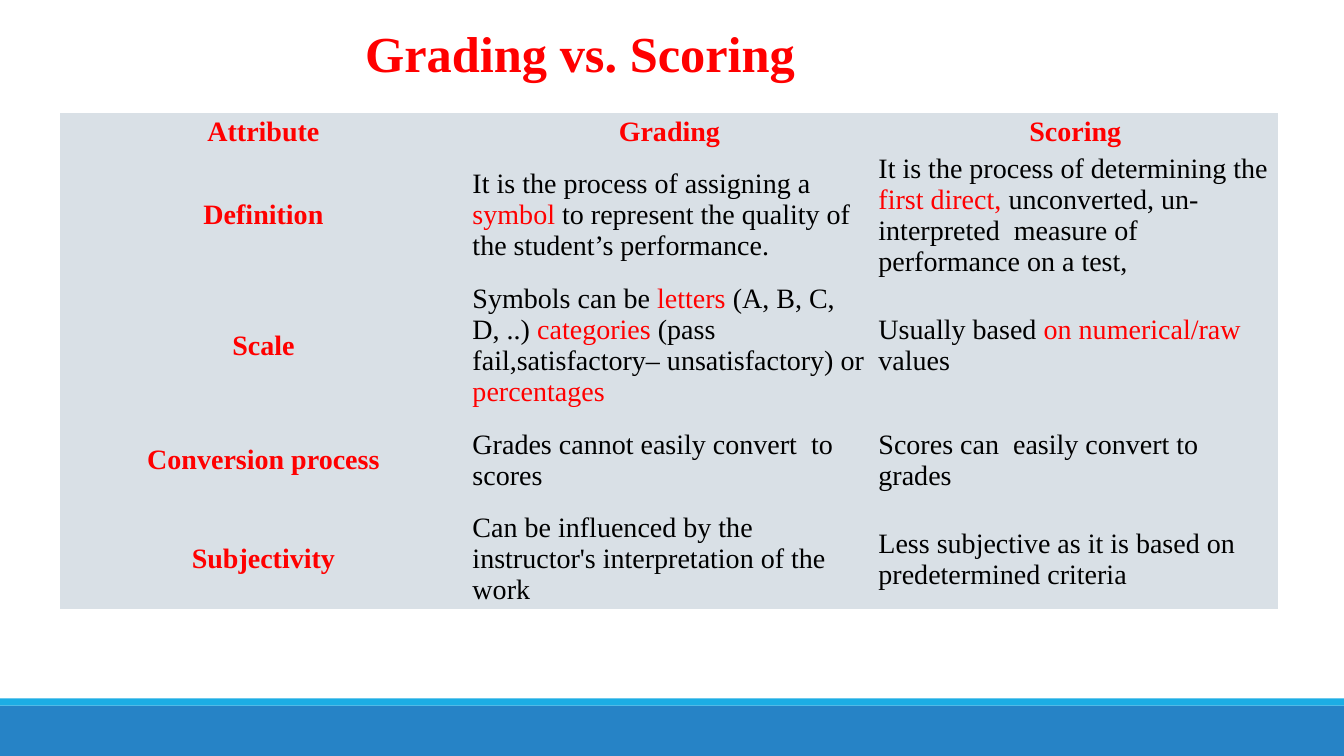
from pptx import Presentation
from pptx.dml.color import RGBColor
from pptx.enum.shapes import MSO_SHAPE
from pptx.enum.text import MSO_ANCHOR, PP_ALIGN
from pptx.oxml.ns import qn
from pptx.util import Inches, Pt

COLORS = {
    "text": "000000",
    "accent": "FF0000",
    "cell": "D9E0E6",
    "band": "2683C6",
    "stripe": "1CADE4",
}
FONT = "Times New Roman"
PLAIN_TABLE_STYLE = "{2D5ABB26-0587-4C30-8999-92F81FD0307C}"
SLIDE_WIDTH, SLIDE_HEIGHT = 13.33, 7.5

HEADER = ["Attribute", "Grading", "Scoring"]
# Text between asterisks is highlighted
ROWS = [
    ["Definition",
     "It is the process of assigning a *symbol* to represent the quality of "
     "the student’s performance.",
     "It is the process of determining the *first direct, *unconverted, "
     "un-interpreted  measure of performance on a test,"],
    ["Scale",
     "Symbols can be *letters* (A, B, C, D, ..) *categories* (pass "
     "fail,satisfactory– unsatisfactory) or *percentages*",
     "Usually based *on numerical/raw* values"],
    ["Conversion process",
     "Grades cannot easily convert  to scores",
     "Scores can  easily convert to grades"],
    ["Subjectivity",
     "Can be influenced by the instructor's interpretation of the work",
     "Less subjective as it is based on predetermined criteria"],
]
ROW_HEIGHTS = [0.37, 1.29, 1.29, 0.98, 0.98]


def color(name):
    return RGBColor.from_string(COLORS[name])


def format_run(run, size, color_name, bold):
    run.font.name = FONT
    run.font.size = Pt(size)
    run.font.bold = bold
    run.font.color.rgb = color(color_name)


def add_footer(slide, left, top, width, height):
    """Thin stripe on top of a wide band."""
    stripe_height = 0.07
    parts = [
        ("band", top + stripe_height, height - stripe_height),
        ("stripe", top, stripe_height),
    ]
    for name, part_top, part_height in parts:
        shape = slide.shapes.add_shape(
            MSO_SHAPE.RECTANGLE, Inches(left), Inches(part_top),
            Inches(width), Inches(part_height))
        shape.shadow.inherit = False
        shape.fill.solid()
        shape.fill.fore_color.rgb = color(name)
        shape.line.fill.background()


def add_title(slide, text, left, top, width, height):
    box = slide.shapes.add_textbox(
        Inches(left), Inches(top), Inches(width), Inches(height))
    box.text_frame.word_wrap = True
    box.text_frame.text = text
    paragraph = box.text_frame.paragraphs[0]
    paragraph.alignment = PP_ALIGN.CENTER
    format_run(paragraph.runs[0], 36, "accent", True)


def fill_cell(cell, text, is_heading):
    cell.fill.solid()
    cell.fill.fore_color.rgb = color("cell")
    cell.vertical_anchor = MSO_ANCHOR.MIDDLE
    cell.margin_left = cell.margin_right = Inches(0.06)
    cell.margin_top = cell.margin_bottom = Inches(0.03)
    paragraph = cell.text_frame.paragraphs[0]
    paragraph.alignment = PP_ALIGN.CENTER if is_heading else PP_ALIGN.LEFT
    for index, part in enumerate(text.split("*")):
        if part:
            run = paragraph.add_run()
            run.text = part
            highlighted = is_heading or index % 2 == 1
            format_run(run, 20, "accent" if highlighted else "text", is_heading)


def add_comparison(slide, left, top, width):
    """Table with headings in its first row and first column."""
    content = [HEADER] + ROWS
    frame = slide.shapes.add_table(
        len(content), len(HEADER), Inches(left), Inches(top),
        Inches(width), Inches(sum(ROW_HEIGHTS)))
    table = frame.table
    table.horz_banding = False
    for style in frame.element.iter(qn("a:tableStyleId")):
        style.text = PLAIN_TABLE_STYLE
    for column in table.columns:
        column.width = Inches(width / len(HEADER))
    for row_index, texts in enumerate(content):
        table.rows[row_index].height = Inches(ROW_HEIGHTS[row_index])
        for column_index, text in enumerate(texts):
            fill_cell(table.cell(row_index, column_index), text,
                      row_index == 0 or column_index == 0)


def main():
    presentation = Presentation()
    presentation.slide_width = Inches(SLIDE_WIDTH)
    presentation.slide_height = Inches(SLIDE_HEIGHT)
    slide = presentation.slides.add_slide(presentation.slide_layouts[6])
    add_footer(slide, 0, 6.93, SLIDE_WIDTH, 0.57)
    add_comparison(slide, 0.6, 1.12, 12.08)
    add_title(slide, "Grading vs. Scoring", 1.67, 0.17, 8.17, 0.71)
    presentation.save("out.pptx")


if __name__ == "__main__":
    main()
